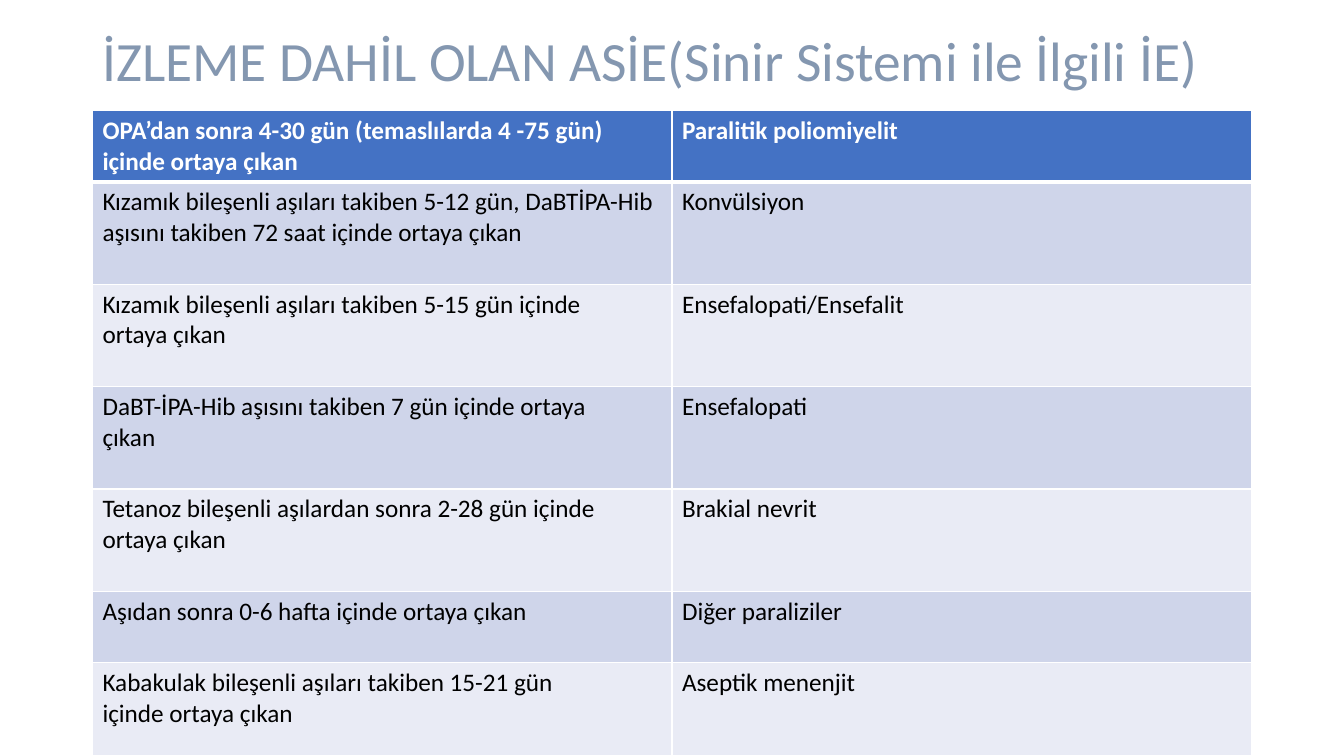
from dataclasses import dataclass

from lxml.etree import SubElement
from pptx import Presentation
from pptx.dml.color import RGBColor
from pptx.enum.text import MSO_ANCHOR
from pptx.oxml.ns import qn
from pptx.util import Cm, Pt


@dataclass(frozen=True)
class Theme:
    font: str = "Calibri"
    title_size: float = 39.6
    body_size: float = 18
    title: str = "8497B0"
    text: str = "000000"
    white: str = "FFFFFF"
    header: str = "4472C4"
    bands: tuple = ("CFD5EA", "E9EBF5")


THEME = Theme()
LEFT, WIDTH = 2.33, 29.21
TITLE_HEIGHT = 3.18
TABLE_TOP = 2.79
SHORT_ROW, TALL_ROW, LAST_ROW = 1.79, 2.58, 2.36

TITLE = "İZLEME DAHİL OLAN ASİE(Sinir Sistemi ile İlgili İE)"
# Each row: period after vaccination, adverse event, row height in cm.
ROWS = [
    ("OPA’dan sonra 4-30 gün (temaslılarda 4 -75 gün)\niçinde ortaya çıkan",
     "Paralitik poliomiyelit", SHORT_ROW),
    ("Kızamık bileşenli aşıları takiben 5-12 gün, DaBTİPA-Hib "
     "aşısını takiben 72 saat içinde ortaya çıkan", "Konvülsiyon", TALL_ROW),
    ("Kızamık bileşenli aşıları takiben 5-15 gün içinde\nortaya çıkan",
     "Ensefalopati/Ensefalit", TALL_ROW),
    ("DaBT-İPA-Hib aşısını takiben 7 gün içinde ortaya\nçıkan",
     "Ensefalopati", TALL_ROW),
    ("Tetanoz bileşenli aşılardan sonra 2-28 gün içinde\nortaya çıkan",
     "Brakial nevrit", TALL_ROW),
    ("Aşıdan sonra 0-6 hafta içinde ortaya çıkan",
     "Diğer paraliziler", SHORT_ROW),
    ("Kabakulak bileşenli aşıları takiben 15-21 gün\niçinde ortaya çıkan",
     "Aseptik menenjit", LAST_ROW),
]


def write_text(tf, text, *, size, color, bold=False, line_spacing=None):
    """Fill a text frame with one paragraph per line of text."""
    tf.word_wrap = True
    for i, line in enumerate(text.split("\n")):
        p = tf.paragraphs[0] if i == 0 else tf.add_paragraph()
        p.line_spacing = line_spacing
        r = p.add_run()
        r.text = line
        r.font.name = THEME.font
        r.font.size = Pt(size)
        r.font.bold = bold
        r.font.color.rgb = RGBColor.from_string(color)


def set_borders(cell, **widths):
    """Draw white cell borders; widths maps L, R, T and B to points."""
    tcPr = cell._tc.get_or_add_tcPr()
    for i, (side, width) in enumerate(widths.items()):
        ln = SubElement(tcPr, qn(f"a:ln{side}"), w=str(Pt(width)))
        fill = SubElement(ln, qn("a:solidFill"))
        SubElement(fill, qn("a:srgbClr"), val=THEME.white)
        tcPr.insert(i, ln)


def add_title(s, text):
    box = s.shapes.add_textbox(Cm(LEFT), Cm(0), Cm(WIDTH), Cm(TITLE_HEIGHT))
    tf = box.text_frame
    tf.vertical_anchor = MSO_ANCHOR.MIDDLE
    write_text(tf, text, size=THEME.title_size, color=THEME.title,
               line_spacing=0.9)


def add_event_table(s, rows):
    height = sum(row[-1] for row in rows)
    table = s.shapes.add_table(len(rows), 2, Cm(LEFT), Cm(TABLE_TOP),
                               Cm(WIDTH), Cm(height)).table
    for i, (period, event, row_height) in enumerate(rows):
        table.rows[i].height = Cm(row_height)
        header = i == 0
        fill = THEME.header if header else THEME.bands[(i - 1) % 2]
        for j, text in enumerate((period, event)):
            cell = table.cell(i, j)
            cell.fill.solid()
            cell.fill.fore_color.rgb = RGBColor.from_string(fill)
            set_borders(cell, L=1, R=1, T=3 if i == 1 else 1,
                        B=3 if header else 1)
            write_text(cell.text_frame, text, size=THEME.body_size,
                       color=THEME.white if header else THEME.text,
                       bold=header)


def main():
    prs = Presentation()
    prs.slide_width, prs.slide_height = Cm(33.87), Cm(19.05)
    s = prs.slides.add_slide(prs.slide_layouts[6])
    add_title(s, TITLE)
    add_event_table(s, ROWS)
    prs.save("out.pptx")


if __name__ == "__main__":
    main()
